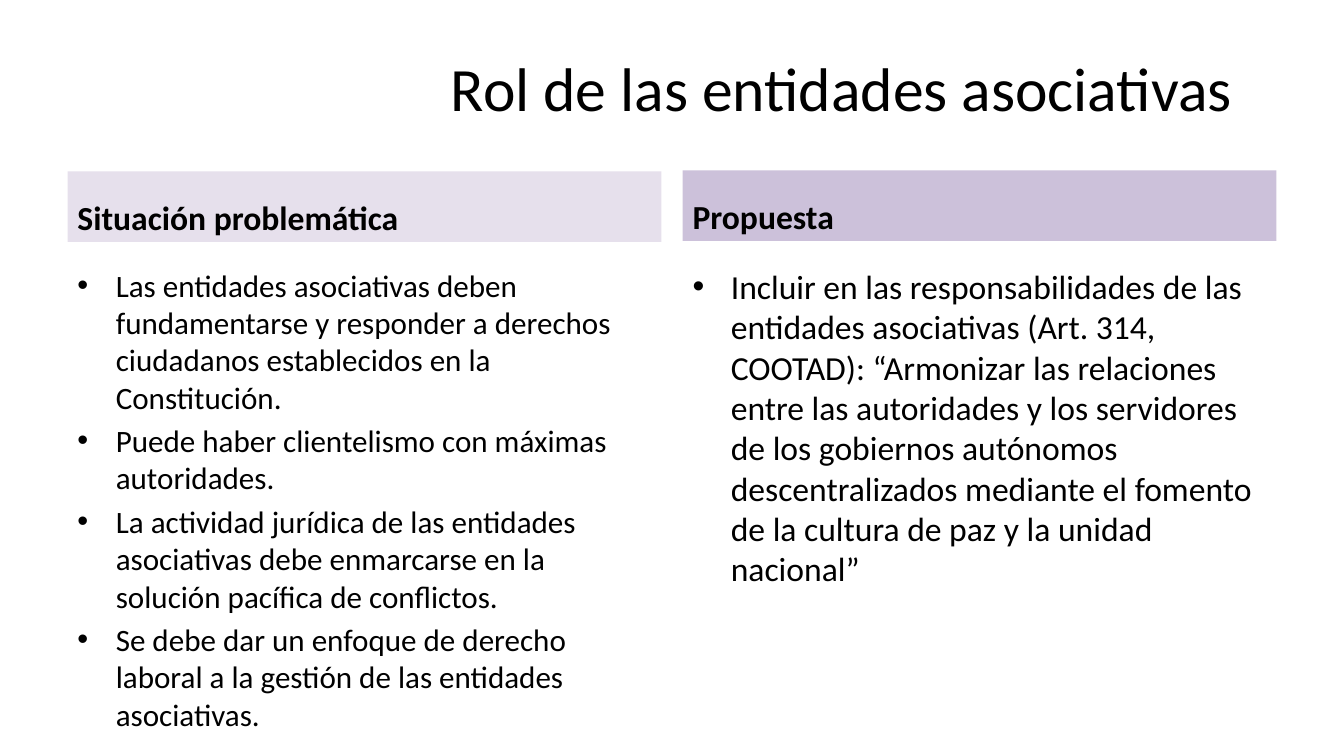
"""Build the slide on the role of associative entities."""
from dataclasses import dataclass

from lxml import etree
from pptx import Presentation
from pptx import util as u
from pptx.dml.color import RGBColor
from pptx.enum import shapes, text
from pptx.oxml.ns import qn

TITLE = "Rol de las entidades asociativas"
COLUMNS = [
    {
        "heading": "Situación problemática",
        "fill": "E6E0EC",
        "top": 1.7,
        "size": 22.2,
        "points": [
            "Las entidades asociativas deben fundamentarse y responder a derechos "
            "ciudadanos establecidos en la Constitución.",
            "Puede haber clientelismo con máximas autoridades.",
            "La actividad jurídica de las entidades asociativas debe enmarcarse en la "
            "solución pacífica de conflictos.",
            "Se debe dar un enfoque de derecho laboral a la gestión de las entidades "
            "asociativas.",
        ],
    },
    {
        "heading": "Propuesta",
        "fill": "CCC1DA",
        "top": 1.69,
        "size": 24,
        "points": [
            "Incluir en las responsabilidades de las entidades asociativas (Art. 314, "
            "COOTAD): “Armonizar las relaciones entre las autoridades y los servidores "
            "de los gobiernos autónomos descentralizados mediante el fomento de la "
            "cultura de paz y la unidad nacional”",
        ],
    },
]


@dataclass(frozen=True)
class Theme:
    font: str = "Calibri"
    ink: str = "000000"
    title: float = 44
    heading: float = 24
    spacing: float = 0.2
    indent: float = 0.38


THEME = Theme()
WIDTH, HEIGHT = 13.33, 7.5
MARGIN, GUTTER = 0.67, 0.21
COLUMN_WIDTH = (WIDTH - 2 * MARGIN - GUTTER) / 2
TITLE_LEFT = 4.04
HEADING_HEIGHT = 0.7
BODY_TOP, BODY_HEIGHT = 2.59, 4.11


def prepare(shape, anchor):
    frame = shape.text_frame
    frame.word_wrap = True
    frame.auto_size = text.MSO_AUTO_SIZE.NONE
    frame.vertical_anchor = anchor
    return frame


def write(paragraph, words, size, bold=False, align=text.PP_ALIGN.LEFT):
    paragraph.alignment = align
    run = paragraph.add_run()
    run.text = words
    run.font.name = THEME.font
    run.font.size = u.Pt(size)
    run.font.bold = bold
    run.font.color.rgb = RGBColor.from_string(THEME.ink)


def add_bullet(paragraph):
    properties = paragraph._p.get_or_add_pPr()
    indent = u.Inches(THEME.indent)
    properties.set("marL", str(indent))
    properties.set("indent", str(-indent))
    etree.SubElement(properties, qn("a:buFont"), typeface="Arial")
    etree.SubElement(properties, qn("a:buChar"), char="•")


def add_text_box(slide, *place):
    return slide.shapes.add_textbox(*map(u.Inches, place))


def add_title(slide):
    box = add_text_box(slide, TITLE_LEFT, 0.24, WIDTH - MARGIN - TITLE_LEFT, 1.25)
    frame = prepare(box, text.MSO_ANCHOR.MIDDLE)
    write(frame.paragraphs[0], TITLE, THEME.title, align=text.PP_ALIGN.CENTER)


def add_heading(slide, column, left):
    place = (left, column["top"], COLUMN_WIDTH, HEADING_HEIGHT)
    band = slide.shapes.add_shape(shapes.MSO_SHAPE.RECTANGLE, *map(u.Inches, place))
    band.shadow.inherit = False
    band.fill.solid()
    band.fill.fore_color.rgb = RGBColor.from_string(column["fill"])
    band.line.fill.background()
    frame = prepare(band, text.MSO_ANCHOR.BOTTOM)
    write(frame.paragraphs[0], column["heading"], THEME.heading, bold=True)


def add_points(slide, column, left):
    box = add_text_box(slide, left, BODY_TOP, COLUMN_WIDTH, BODY_HEIGHT)
    frame = prepare(box, text.MSO_ANCHOR.TOP)
    for index, point in enumerate(column["points"]):
        paragraph = frame.add_paragraph() if index else frame.paragraphs[0]
        add_bullet(paragraph)
        if index:
            paragraph.space_before = u.Pt(THEME.spacing * column["size"])
        write(paragraph, point, column["size"])


def main():
    presentation = Presentation()
    presentation.slide_width = u.Inches(WIDTH)
    presentation.slide_height = u.Inches(HEIGHT)
    slide = presentation.slides.add_slide(presentation.slide_layouts[6])
    add_title(slide)
    for index, column in enumerate(COLUMNS):
        left = MARGIN + index * (COLUMN_WIDTH + GUTTER)
        add_points(slide, column, left)
        add_heading(slide, column, left)
    presentation.save("out.pptx")


if __name__ == "__main__":
    main()
